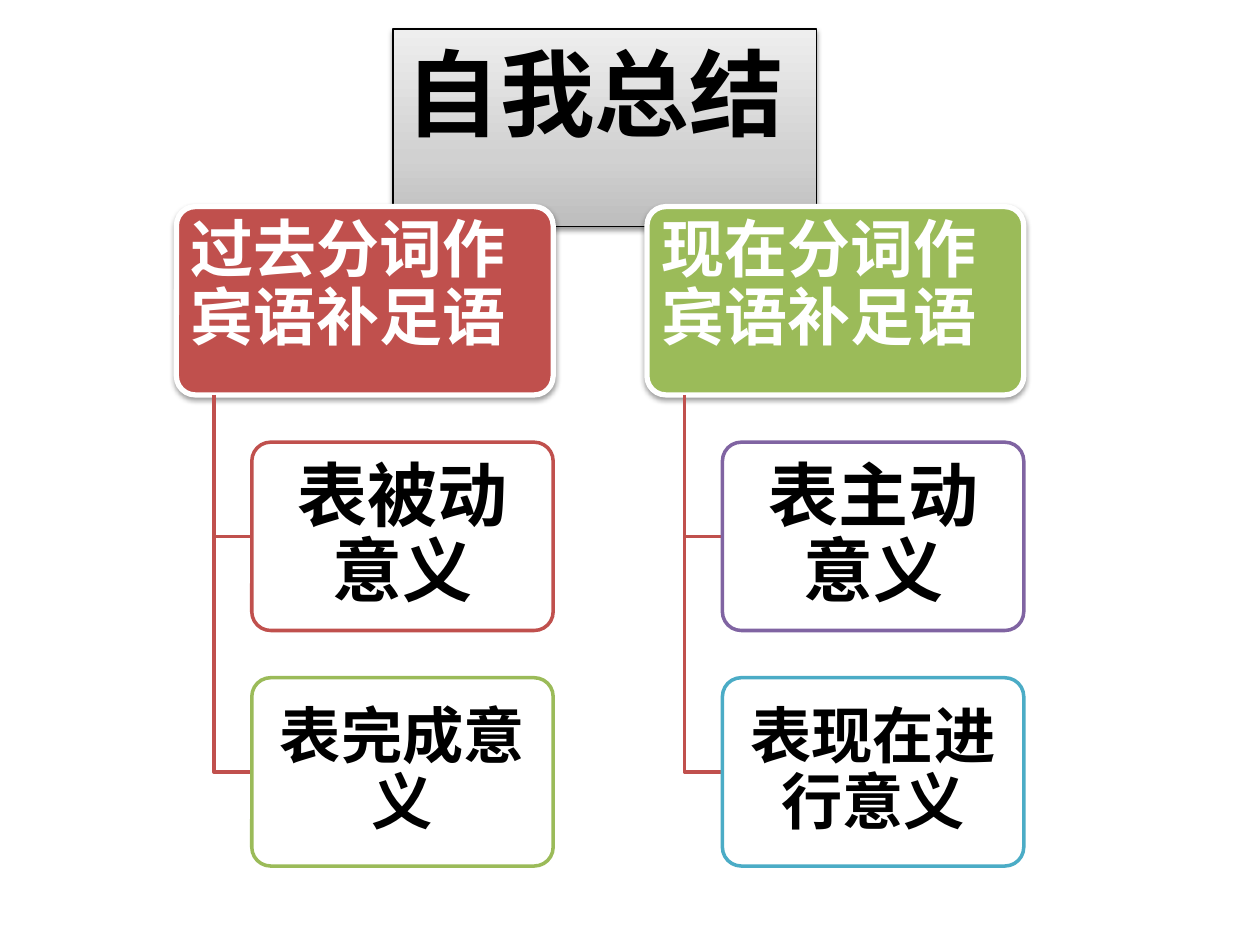
from copy import deepcopy
from dataclasses import dataclass

from lxml.etree import SubElement
from pptx import Presentation
from pptx.dml.color import RGBColor
from pptx.enum.shapes import MSO_SHAPE as Preset
from pptx.enum.text import MSO_ANCHOR as Anchor, MSO_AUTO_SIZE as AutoSize, PP_ALIGN as Align
from pptx.oxml.ns import qn
from pptx.util import Pt

WHITE = RGBColor(0xFF, 0xFF, 0xFF)
BLACK = RGBColor(0x00, 0x00, 0x00)
RED = RGBColor(0xC0, 0x50, 0x4D)
GREEN = RGBColor(0x9B, 0xBB, 0x59)
PURPLE = RGBColor(0x80, 0x64, 0xA2)
TEAL = RGBColor(0x4B, 0xAC, 0xC6)
TITLE_GRADIENT = [
    (0, RGBColor(0xBD, 0xBD, 0xBD)),
    (0.35, RGBColor(0xD1, 0xD1, 0xD1)),
    (1, RGBColor(0xEE, 0xEE, 0xEE)),
]

# Diagram grid, in points
LEFT, TOP = 100.8, 118.1
COLUMN_PITCH, ROW_PITCH = 268.9, 134.6
HEADER_WIDTH, BOX_HEIGHT = 215.3, 107.6
STEM_OFFSET, CHILD_OFFSET = 21.5, 43.1
CHILD_WIDTH = HEADER_WIDTH - CHILD_OFFSET


@dataclass
class Box:
    text: str
    color: RGBColor
    size: float
    inset_x: float = 5
    inset_y: float = 3.5


@dataclass
class Branch:
    header: Box
    children: list[Box]


BRANCHES = [
    Branch(Box("过去分词作宾语补足语", RED, 36),
           [Box("表被动意义", RED, 40, 6, 4), Box("表完成意义", GREEN, 35)]),
    Branch(Box("现在分词作宾语补足语", GREEN, 36),
           [Box("表主动意义", PURPLE, 40, 6, 4), Box("表现在进行意义", TEAL, 35)]),
]


def add_shadow(shape) -> None:
    """Give the shape a soft shadow straight below it."""
    shape.shadow.inherit = False
    effects = shape._element.spPr.find(qn("a:effectLst"))
    shadow = SubElement(effects, qn("a:outerShdw"), blurRad=str(Pt(3.1)),
                        dist=str(Pt(1.6)), dir="5400000", rotWithShape="0")
    color = SubElement(shadow, qn("a:srgbClr"), val=str(BLACK))
    SubElement(color, qn("a:alpha"), val="38000")


def set_line(shape, color: RGBColor, width: float) -> None:
    shape.line.color.rgb = color
    shape.line.width = Pt(width)


def write_text(paragraph, text: str, size: float, color: RGBColor, font_name: str) -> None:
    run = paragraph.add_run()
    run.text = text
    font = run.font
    for name, value in {"size": Pt(size), "bold": True, "name": font_name}.items():
        setattr(font, name, value)
    font.color.rgb = color
    SubElement(run._r.get_or_add_rPr(), qn("a:ea"), typeface=font_name)


def add_box(slide, box: Box, left: float, top: float, width: float, is_header: bool) -> None:
    shape = slide.shapes.add_shape(Preset.ROUNDED_RECTANGLE, Pt(left), Pt(top),
                                   Pt(width), Pt(BOX_HEIGHT))
    shape.adjustments[0] = 0.1
    shape.fill.solid()
    shape.fill.fore_color.rgb = box.color if is_header else WHITE
    if is_header:
        set_line(shape, WHITE, 3)
        add_shadow(shape)
    else:
        set_line(shape, box.color, 2)
        shape.shadow.inherit = False
        fill_color = shape._element.spPr.find(qn("a:solidFill"))[0]
        SubElement(fill_color, qn("a:alpha"), val="90000")

    frame = shape.text_frame
    frame_format = {
        "word_wrap": True,
        "vertical_anchor": Anchor.TOP if is_header else Anchor.MIDDLE,
        "margin_left": Pt(box.inset_x), "margin_right": Pt(box.inset_x),
        "margin_top": Pt(box.inset_y), "margin_bottom": Pt(box.inset_y),
    }
    for name, value in frame_format.items():
        setattr(frame, name, value)
    paragraph = frame.paragraphs[0]
    paragraph.alignment = Align.LEFT if is_header else Align.CENTER
    paragraph.line_spacing = 0.9
    write_text(paragraph, box.text, box.size, WHITE if is_header else BLACK,
               "Noto Sans CJK JP" if is_header else "Noto Sans CJK SC")


def add_elbow(slide, left: float, top: float, right: float, bottom: float) -> None:
    builder = slide.shapes.build_freeform(Pt(left), Pt(top))
    builder.add_line_segments([(Pt(left), Pt(bottom)), (Pt(right), Pt(bottom))], close=False)
    elbow = builder.convert_to_shape()
    elbow.fill.background()
    set_line(elbow, RED, 2)
    elbow.shadow.inherit = False


def add_branch(slide, branch: Branch, left: float) -> None:
    add_box(slide, branch.header, left, TOP, HEADER_WIDTH, True)
    for row, child in enumerate(branch.children, start=1):
        child_left, child_top = left + CHILD_OFFSET, TOP + row * ROW_PITCH
        add_elbow(slide, left + STEM_OFFSET, TOP + BOX_HEIGHT,
                  child_left, child_top + BOX_HEIGHT / 2)
        add_box(slide, child, child_left, child_top, CHILD_WIDTH, False)


def format_title(title) -> None:
    placement = {"left": 224.6, "top": 16.6, "width": 241.9, "height": 72.7}
    for name, value in placement.items():
        setattr(title, name, Pt(value))

    # Three-stop gradient, dark at the bottom
    title.fill.gradient()
    stop_list = title._element.spPr.find(qn("a:gradFill")).find(qn("a:gsLst"))
    stop_list.append(deepcopy(stop_list[-1]))
    for stop, (position, color) in zip(title.fill.gradient_stops, TITLE_GRADIENT):
        stop.position = position
        stop.color.rgb = color
    title.fill.gradient_angle = 90
    set_line(title, BLACK, 0.75)
    add_shadow(title)

    frame = title.text_frame
    frame_format = {"word_wrap": True, "vertical_anchor": Anchor.TOP,
                    "auto_size": AutoSize.SHAPE_TO_FIT_TEXT}
    for name, value in frame_format.items():
        setattr(frame, name, value)
    paragraph = frame.paragraphs[0]
    paragraph.alignment = Align.LEFT
    write_text(paragraph, "自我总结", 54, BLACK, "Quicksand")


def main() -> None:
    presentation = Presentation()
    presentation.slide_width, presentation.slide_height = Pt(720), Pt(540)
    slide = presentation.slides.add_slide(presentation.slide_layouts[5])

    format_title(slide.shapes.title)
    for column, branch in enumerate(BRANCHES):
        add_branch(slide, branch, LEFT + column * COLUMN_PITCH)

    presentation.save("out.pptx")


if __name__ == "__main__":
    main()
